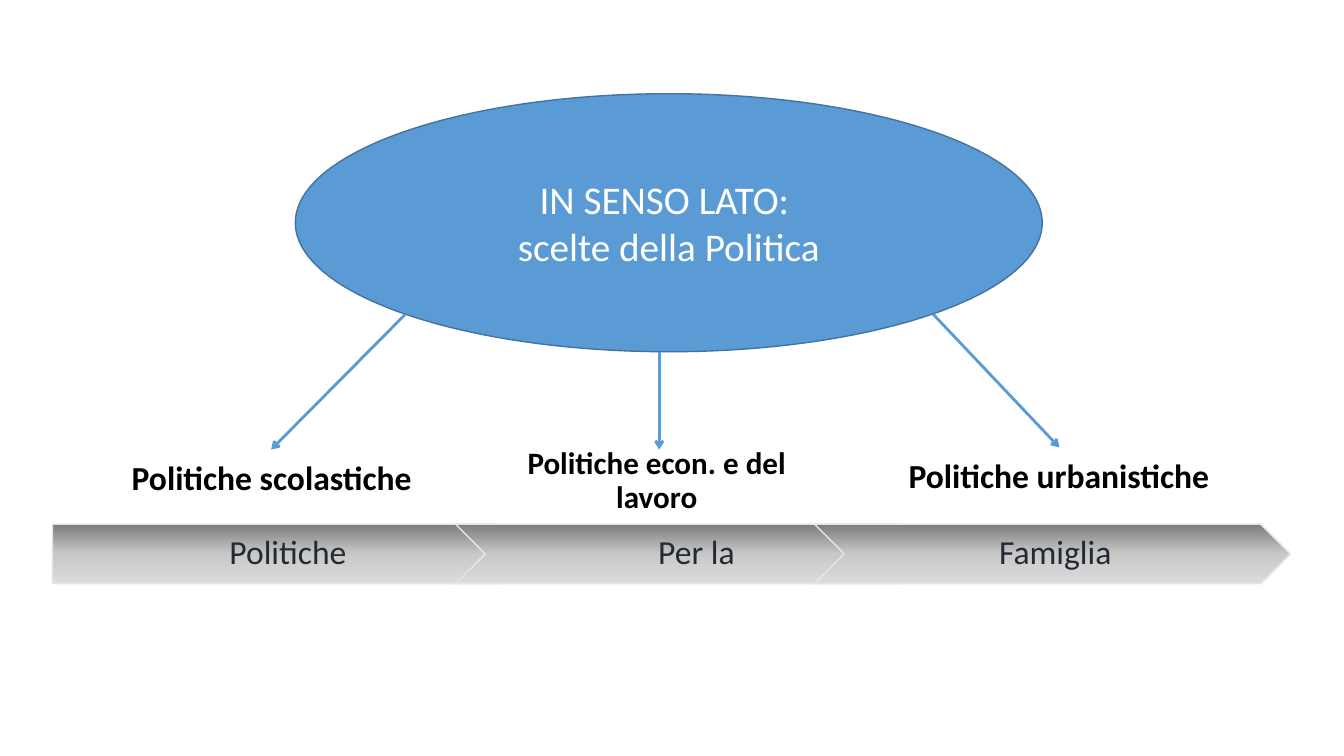
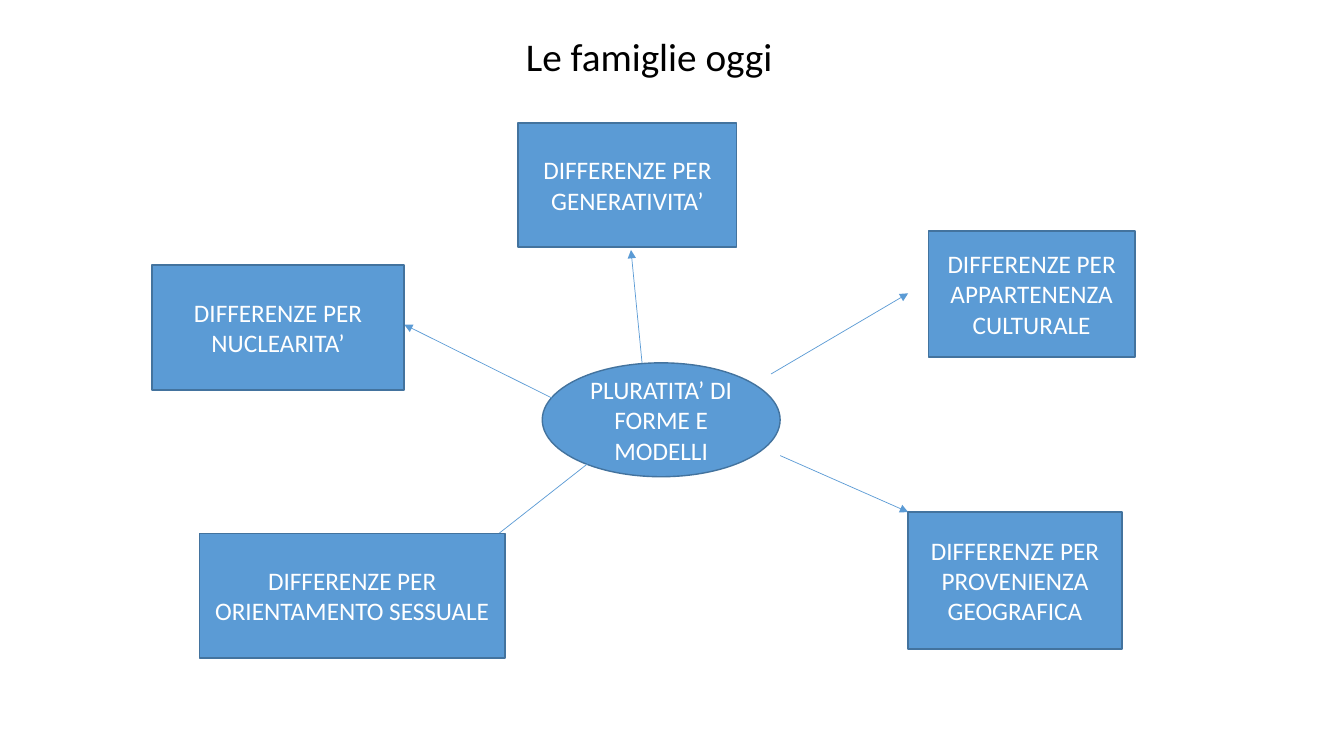
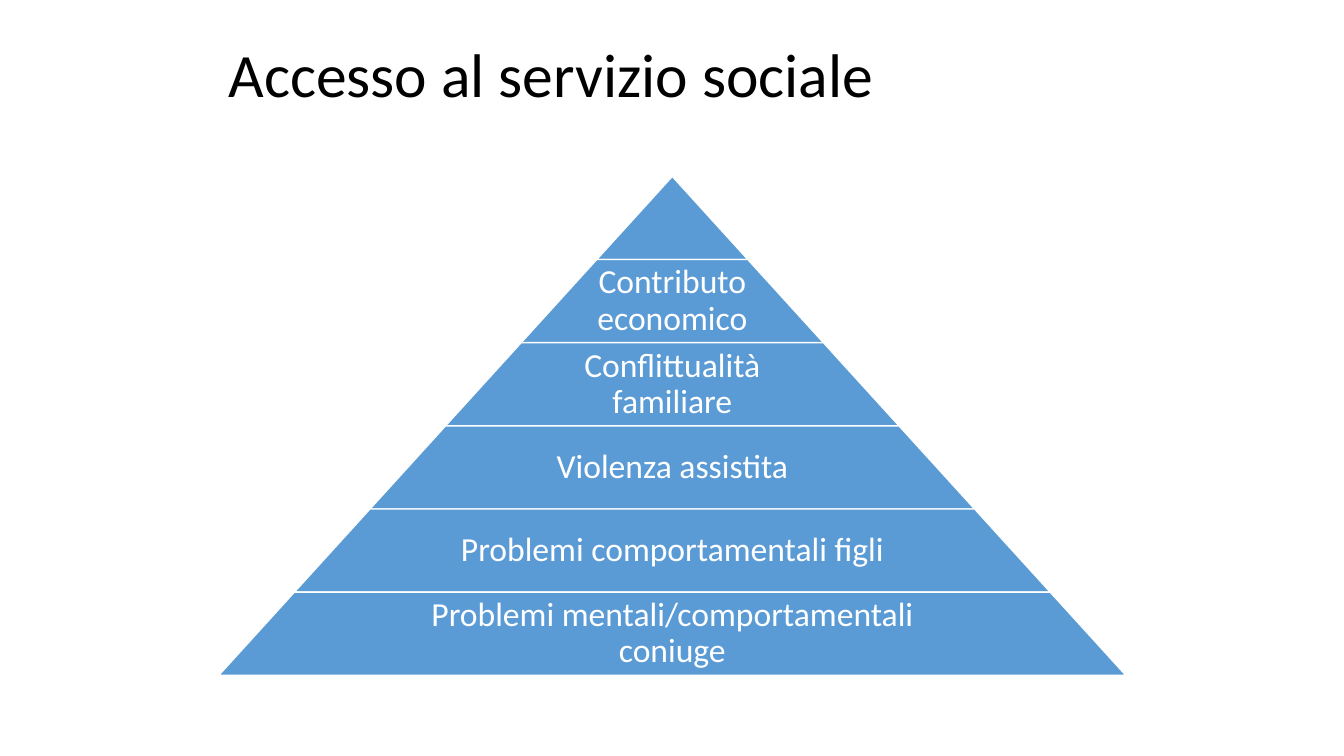
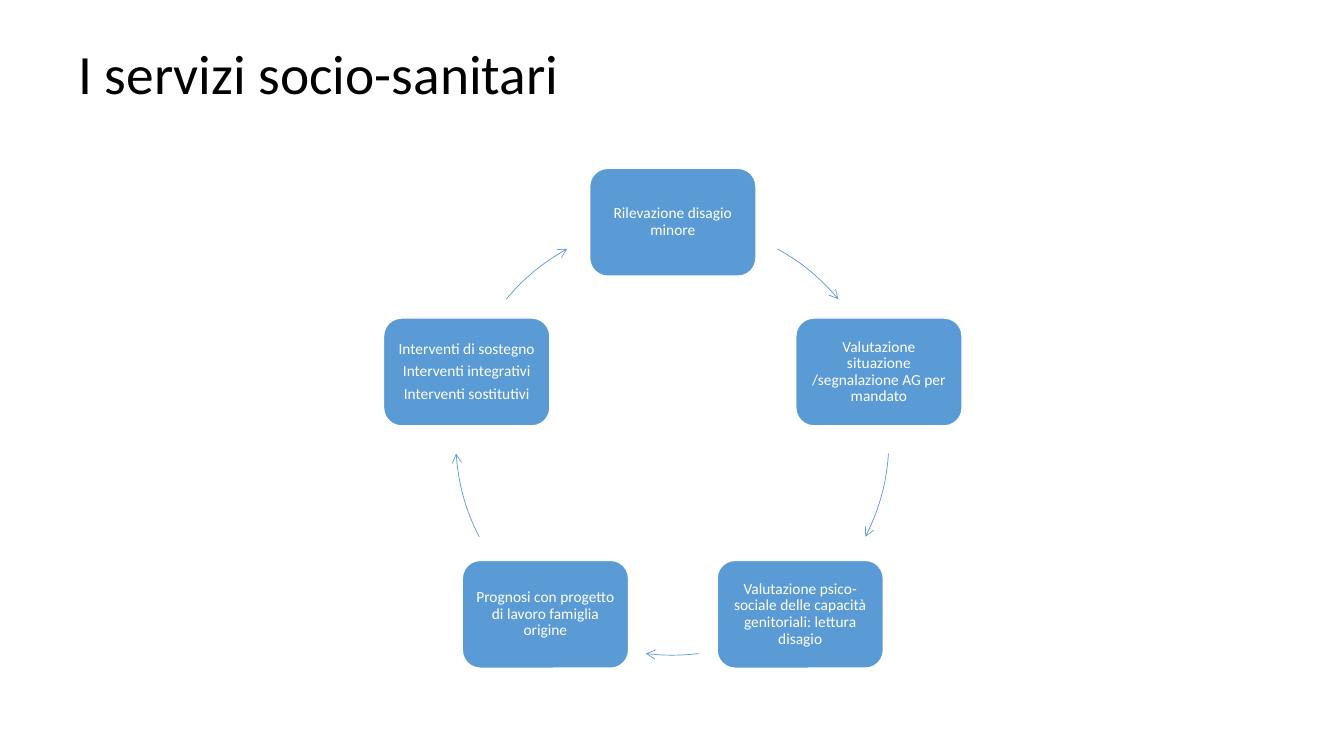
from copy import deepcopy
from math import cos, radians, sin

from lxml.etree import SubElement
from pptx import Presentation
from pptx.dml.color import RGBColor
from pptx.enum.shapes import MSO_CONNECTOR, MSO_SHAPE
from pptx.enum.text import MSO_ANCHOR, PP_ALIGN
from pptx.oxml.ns import qn
from pptx.util import Pt

PX = 9144  # 100 px to the inch
FONT = "Calibri"
BLUE = RGBColor(0x5B, 0x9B, 0xD5)
DARK_BLUE = RGBColor(0x43, 0x73, 0x9E)
WHITE = RGBColor(0xFF, 0xFF, 0xFF)
BLACK = RGBColor(0, 0, 0)
SLATE = RGBColor(0x22, 0x2A, 0x35)
PALE = RGBColor(0xE7, 0xE6, 0xE6)
GREYS = [(0, RGBColor(0x7C, 0x7C, 0x7C)), (0.51, RGBColor(0xC9, 0xC9, 0xC9)),
         (1, RGBColor(0xDB, 0xDB, 0xDB))]


def box(s, kind, at, paras=(), size=18, color=WHITE, outline=DARK_BLUE, bold=False,
        align=PP_ALIGN.CENTER, spacing=0.9, after=0, inset=(10, 5, 10, 5)):
    """Add a blue preset shape, or a plain text box when kind is None."""
    x, y, w, h = (round(v * PX) for v in at)
    if kind is None:
        sp = s.shapes.add_textbox(x, y, w, h)
    else:
        sp = s.shapes.add_shape(kind, x, y, w, h)
        sp.shadow.inherit = False
        sp.fill.solid()
        sp.fill.fore_color.rgb = BLUE
        sp.line.color.rgb = outline
        sp.line.width = Pt(1)
    tf = sp.text_frame
    tf.word_wrap = True
    tf.vertical_anchor = MSO_ANCHOR.MIDDLE
    tf.margin_left, tf.margin_top, tf.margin_right, tf.margin_bottom = (v * PX for v in inset)
    for i, text in enumerate(paras):
        p = tf.add_paragraph() if i else tf.paragraphs[0]
        p.alignment = align
        p.line_spacing = spacing
        p.space_after = Pt(after)
        r = p.add_run()
        r.text = text
        r.font.name = FONT
        r.font.size = Pt(size)
        r.font.bold = bold
        r.font.color.rgb = color
    return sp


def style_arrow(sp, width, head):
    sp.line.color.rgb = BLUE
    sp.line.width = Pt(width)
    spPr = sp._element.spPr
    SubElement(spPr.find(qn("a:ln")), qn("a:tailEnd"), type=head)
    if spPr.find(qn("a:effectLst")) is None:
        SubElement(spPr, qn("a:effectLst"))


prs = Presentation()
prs.slide_width, prs.slide_height = 12192000, 6858000
policies, families, access, services = (
    prs.slides.add_slide(prs.slide_layouts[6]) for _ in range(4))

# Policies
s = policies
box(s, MSO_SHAPE.OVAL, (293, 93, 741, 256), ["IN SENSO LATO: ", "scelte della Politica"],
    28, spacing=1)
for ends, at, text, size in [
    ((402, 312, 269, 446), (92, 446), "Politiche scolastiche", 24),
    ((654, 349, 654, 446), (474, 448), "Politiche econ. e del lavoro", 22.2),
    ((926, 312, 1051, 444), (873, 444), "Politiche urbanistiche", 24),
]:
    arrow = s.shapes.add_connector(MSO_CONNECTOR.STRAIGHT, *(v * PX for v in ends))
    style_arrow(arrow, 2, "arrow")
    box(s, None, (*at, 355, 59), [text], size, BLACK, bold=True)
for kind, left, text, inset in [
    (MSO_SHAPE.PENTAGON, 52, "Politiche", 14),
    (MSO_SHAPE.CHEVRON, 452, "Per la", 10),
    (MSO_SHAPE.CHEVRON, 808, "Famiglia", 10),
]:
    sp = box(s, kind, (left, 520, 472, 59), [text], 24, SLATE, PALE, inset=(inset, 7, 4, 7))
    sp.fill.gradient()
    sp.fill.gradient_angle = 270
    stops = sp._element.spPr.find(qn("a:gradFill")).find(qn("a:gsLst"))
    stops.append(deepcopy(stops[0]))
    for stop, (position, grey) in zip(sp.fill.gradient_stops, GREYS):
        stop.position = position
        stop.color.rgb = grey

# Families
s = families
box(s, None, (69, -3, 1150, 123), ["Le famiglie oggi"], 28, BLACK)
box(s, MSO_SHAPE.OVAL, (538, 360, 236, 113), ["PLURATITA’ DI FORME E MODELLI"], spacing=1)
for ends, at, text in [
    ((637, 360, 626, 248), (514, 122, 217, 123), "GENERATIVITA’"),
    ((765, 371, 901, 291), (921, 229, 205, 125), "APPARTENENZA CULTURALE"),
    ((774, 452, 901, 508), (901, 508, 212, 136), "PROVENIENZA GEOGRAFICA"),
    ((592, 453, 466, 552), (198, 529, 303, 124), "ORIENTAMENTO SESSUALE"),
    ((568, 405, 401, 322), (151, 263, 250, 124), "NUCLEARITA’"),
]:
    arrow = s.shapes.add_connector(MSO_CONNECTOR.STRAIGHT, *(v * PX for v in ends))
    style_arrow(arrow, 0.5, "triangle")
    box(s, MSO_SHAPE.RECTANGLE, at, ["DIFFERENZE PER " + text], spacing=1)

# Access pyramid
s = access
box(s, None, (217, 30, 900, 93), ["Accesso al servizio sociale"], 44, BLACK,
    align=PP_ALIGN.LEFT)
levels = ["", "Contributo economico", "Conflittualità familiare", "Violenza assistita",
          "Problemi comportamentali figli", "Problemi mentali/comportamentali coniuge"]
height = 495 / len(levels)
for i, text in enumerate(levels):
    width = 150 * (i + 1)
    top = 175 + i * height
    sp = box(s, MSO_SHAPE.TRAPEZOID, (667 - width / 2, top, width, height), outline=WHITE)
    sp.adjustments[0] = 75 / height
    if text:
        label = width * 0.65
        box(s, None, (667 - label / 2, top, label, height), [text], 24, inset=(3, 3, 3, 3))

# Services cycle
s = services
box(s, None, (68, 40, 1174, 72), ["I servizi socio-sanitari"], 39.6, BLACK,
    align=PP_ALIGN.LEFT)
CX, CY, RADIUS = 667, 435, 215
steps = [
    (["Rilevazione disagio minore"], (299, 320)),
    (["Valutazione situazione /segnalazione AG per mandato"], (4, 27)),
    (["Valutazione psico-sociale delle capacità genitoriali: lettura disagio"], (83, 97)),
    (["Prognosi con progetto di lavoro famiglia origine"], (153, 176)),
    (["Interventi di sostegno", "Interventi integrativi", "Interventi sostitutivi"], (220, 241)),
]
for i, (paras, span) in enumerate(steps):
    angle = radians(360 / len(steps) * i - 90)
    x, y = CX + RADIUS * cos(angle), CY + RADIUS * sin(angle)
    box(s, MSO_SHAPE.ROUNDED_RECTANGLE, (x - 82, y - 53, 165, 107), paras, 11,
        outline=WHITE, after=4 if len(paras) > 1 else 0, inset=(5, 5, 5, 5))
    arc = box(s, MSO_SHAPE.ARC, (CX - RADIUS, CY - RADIUS, 2 * RADIUS, 2 * RADIUS))
    arc.fill.background()
    for n, degrees in enumerate(span):
        arc.adjustments[n] = degrees * 0.6  # 60000ths of a degree, scaled by 100000
    style_arrow(arc, 0.5, "arrow")

prs.save("out.pptx")
